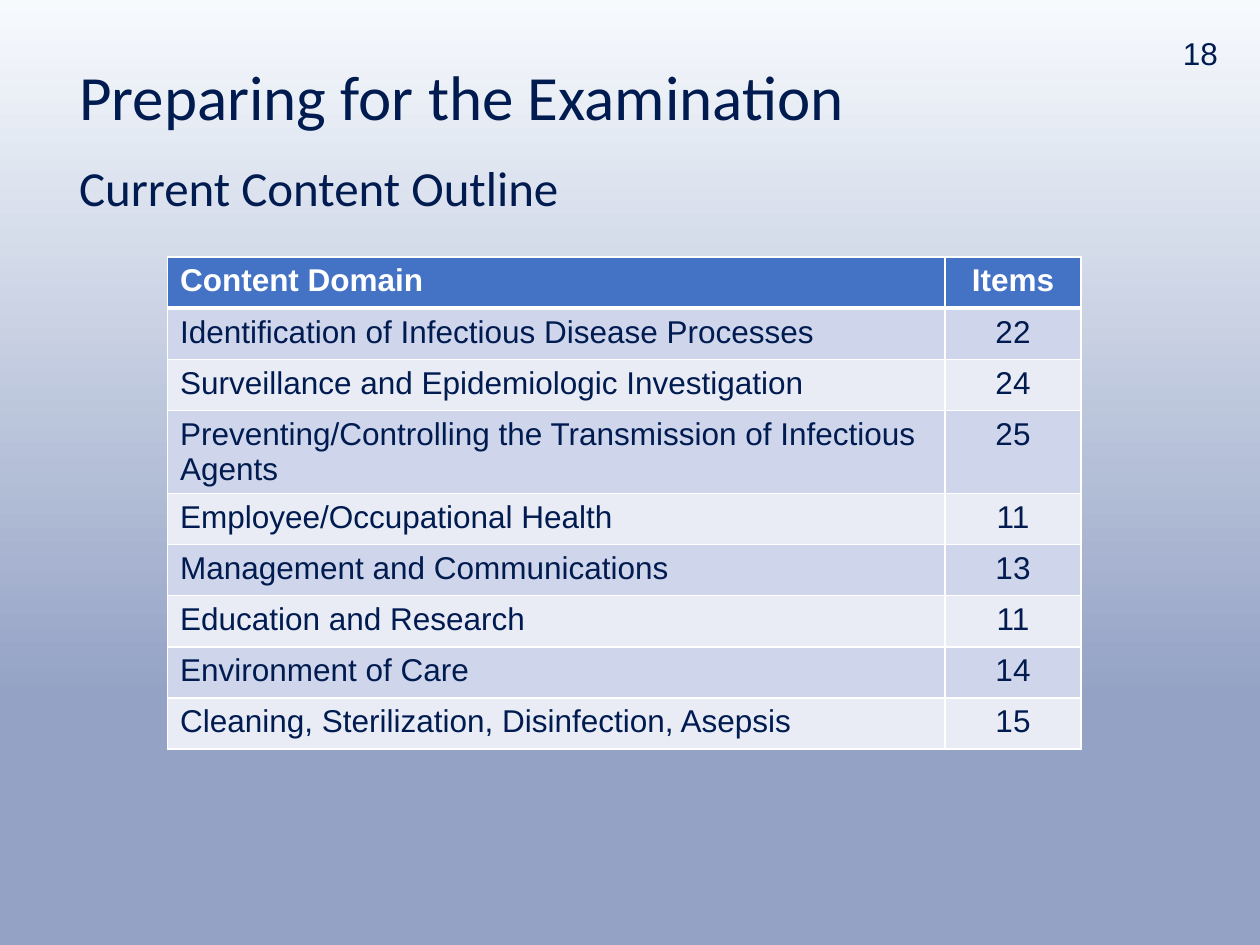
from copy import deepcopy
from dataclasses import dataclass

from lxml import etree
from pptx import Presentation
from pptx.dml.color import RGBColor
from pptx.enum.text import MSO_ANCHOR, MSO_AUTO_SIZE, PP_ALIGN
from pptx.oxml.ns import qn
from pptx.util import Inches, Pt

LEFT, CENTER = PP_ALIGN.LEFT, PP_ALIGN.CENTER
MIDDLE, TOP = MSO_ANCHOR.MIDDLE, MSO_ANCHOR.TOP
NO_FIT = MSO_AUTO_SIZE.NONE

TITLE = "Preparing for the Examination"
SUBTITLE = "Current Content Outline"
PAGE_NUMBER = "18"
OUTLINE = [
    ("Content Domain", "Items"),
    ("Identification of Infectious Disease Processes", "22"),
    ("Surveillance and Epidemiologic Investigation", "24"),
    ("Preventing/Controlling the Transmission of Infectious Agents", "25"),
    ("Employee/Occupational Health", "11"),
    ("Management and Communications", "13"),
    ("Education and Research", "11"),
    ("Environment of Care", "14"),
    ("Cleaning, Sterilization, Disinfection, Asepsis", "15"),
]


@dataclass(frozen=True)
class Theme:
    navy: str = "001B50"
    white: str = "FFFFFF"
    header: str = "4472C4"
    bands: tuple = ("E9EBF5", "CFD5EA")
    sky: tuple = ((0, "F7FAFD"), (0.74, "94A2C5"), (1, "94A2C5"))
    heading_font: str = "Calibri"
    body_font: str = "Arial"
    title_size: int = 36
    subtitle_size: int = 28
    body_size: int = 18
    rule: int = 1
    header_rule: int = 3


THEME = Theme()
WIDTH, HEIGHT = 10, 7.5
MARGIN, TEXT_WIDTH = 0.53, 9
TABLE_LEFT, TABLE_TOP = 1.33, 2.04
COLUMNS = (6.17, 1.08)
ROW_HEIGHT = 3.65 / len(OUTLINE)


def write(frame, text, font, size, color=THEME.navy, bold=False,
          align=LEFT, spacing=1.0):
    frame.text = text
    paragraph = frame.paragraphs[0]
    paragraph.alignment = align
    paragraph.line_spacing = spacing
    look = {"name": font, "size": Pt(size), "bold": bold}
    for key, value in look.items():
        setattr(paragraph.runs[0].font, key, value)
    paragraph.runs[0].font.color.rgb = RGBColor.from_string(color)


def set_frame(frame, anchor=TOP, wrap=True):
    settings = {"vertical_anchor": anchor, "word_wrap": wrap, "auto_size": NO_FIT}
    for key, value in settings.items():
        setattr(frame, key, value)


def add_border(cell, side, points):
    line = etree.SubElement(cell._tc.get_or_add_tcPr(), qn(f"a:ln{side}"), w=str(Pt(points)))
    fill = etree.SubElement(line, qn("a:solidFill"))
    etree.SubElement(fill, qn("a:srgbClr"), val=THEME.white)


def paint_background(slide):
    fill = slide.background.fill
    fill.gradient()
    fill.gradient_angle = 270
    stop_list = slide.element.xpath(".//a:gsLst")[0]
    stop_list.append(deepcopy(stop_list[-1]))
    for stop, (position, color) in zip(fill.gradient_stops, THEME.sky):
        stop.position = position
        stop.color.rgb = RGBColor.from_string(color)


def add_headings(slide):
    title = slide.shapes.title
    place = {"left": MARGIN, "top": 0.17, "width": TEXT_WIDTH, "height": 1.25}
    for key, value in place.items():
        setattr(title, key, Inches(value))
    set_frame(title.text_frame, MIDDLE)
    write(title.text_frame, TITLE, THEME.heading_font, THEME.title_size, spacing=0.9)

    subtitle = slide.shapes.add_textbox(
        *map(Inches, (MARGIN, 1.25, TEXT_WIDTH, 5.37))).text_frame
    set_frame(subtitle)
    write(subtitle, SUBTITLE, THEME.heading_font, THEME.subtitle_size, spacing=0.9)


def add_outline(slide):
    table = slide.shapes.add_table(
        len(OUTLINE), len(COLUMNS),
        *map(Inches, (TABLE_LEFT, TABLE_TOP, sum(COLUMNS), ROW_HEIGHT * len(OUTLINE)))).table
    for column, width in zip(table.columns, COLUMNS):
        column.width = Inches(width)
    for row, entry in enumerate(OUTLINE):
        heading = row == 0
        for column, text in enumerate(entry):
            cell = table.cell(row, column)
            write(cell.text_frame, text, THEME.body_font, THEME.body_size,
                  THEME.white if heading else THEME.navy, heading,
                  CENTER if column else LEFT)
            for side in "LRTB":
                thick = (row, side) in ((0, "B"), (1, "T"))
                add_border(cell, side, THEME.header_rule if thick else THEME.rule)
            cell.fill.solid()
            cell.fill.fore_color.rgb = RGBColor.from_string(
                THEME.header if heading else THEME.bands[row % 2])


def add_page_number(slide):
    number = slide.shapes.add_textbox(*map(Inches, (9.29, 0.22, 0.48, 0.4))).text_frame
    set_frame(number, wrap=False)
    write(number, PAGE_NUMBER, THEME.body_font, THEME.body_size)


def main():
    deck = Presentation()
    deck.slide_width, deck.slide_height = Inches(WIDTH), Inches(HEIGHT)
    slide = deck.slides.add_slide(deck.slide_layouts.get_by_name("Title Only"))
    paint_background(slide)
    add_headings(slide)
    add_outline(slide)
    add_page_number(slide)
    deck.save("out.pptx")


if __name__ == "__main__":
    main()
